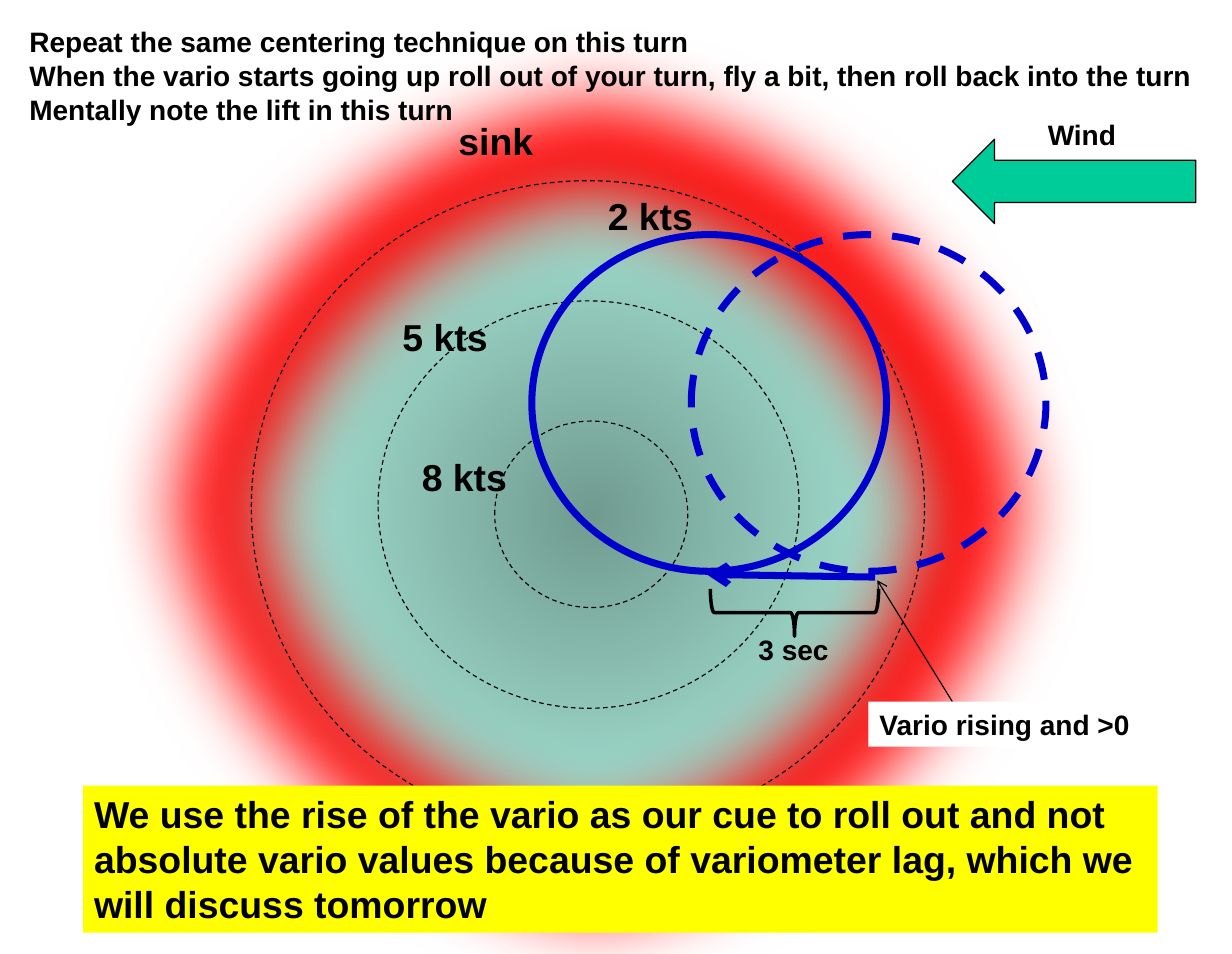
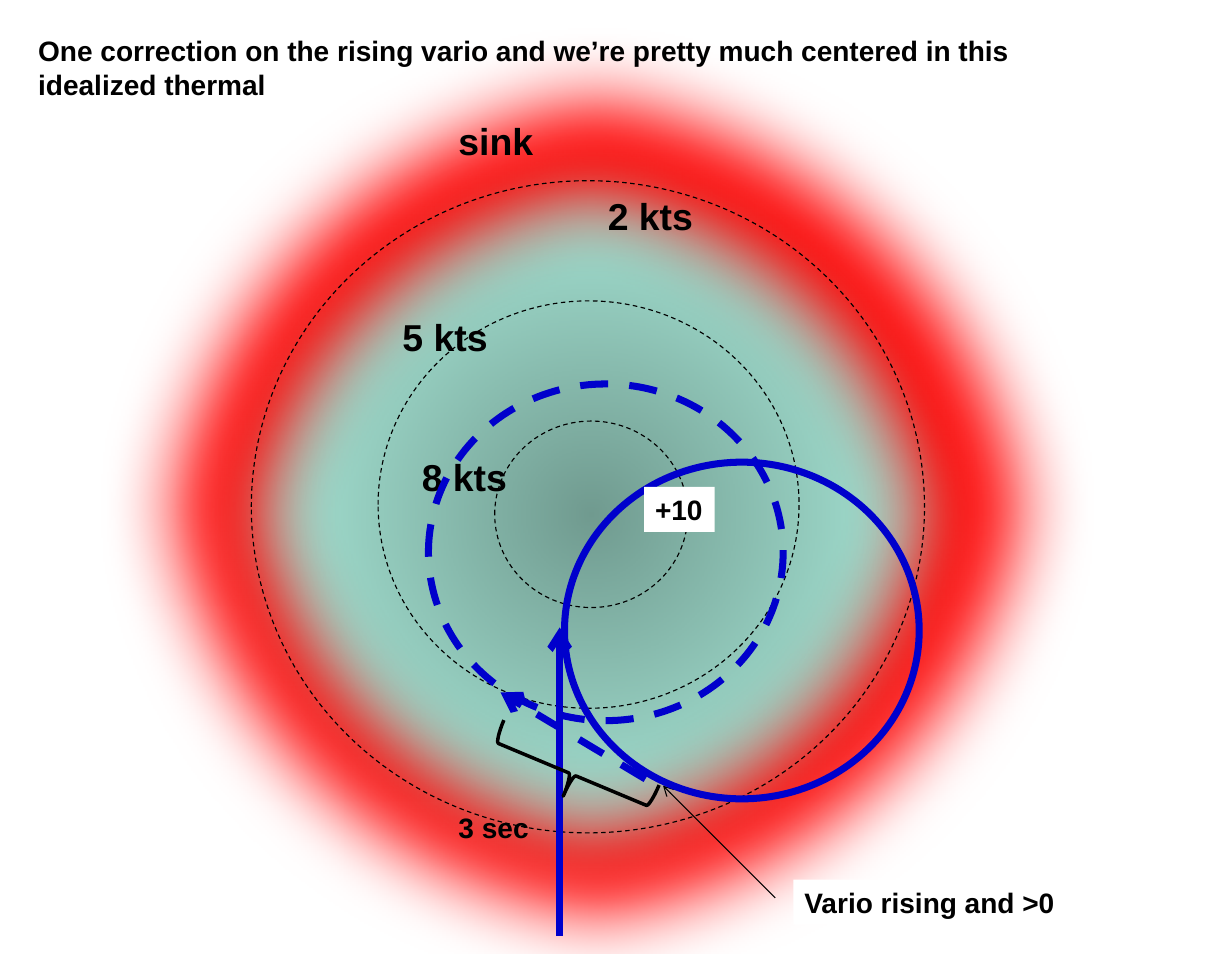
from pptx import Presentation
from pptx.dml.color import RGBColor
from pptx.enum import dml, shapes, text
from pptx.oxml import parse_xml
from pptx.oxml.ns import nsdecls, qn
from pptx.util import Cm, Pt
from lxml import etree

BLACK = RGBColor(0, 0, 0)
WHITE = RGBColor(255, 255, 255)
RED = RGBColor(255, 0, 0)
BLUE = RGBColor(0, 0, 0xCC)
GREEN = RGBColor(0, 0xCC, 0x99)
YELLOW = RGBColor(255, 255, 0)
STOPS = [(0, "709A8F"), (50000, "9FDBCC"), (100000, "C2FFF0")]
DASH = dml.MSO_LINE.DASH
KIND = shapes.MSO_SHAPE


def draw(place, kind, box, fill=None, line=BLACK, width=0.75, dash=None):
    item = place.add_shape(kind, *map(Cm, box))
    item.shadow.inherit = False
    if fill is None:
        item.fill.background()
    else:
        item.fill.solid()
        item.fill.fore_color.rgb = fill
    if line is None:
        item.line.fill.background()
    else:
        item.line.color.rgb = line
        item.line.width = Pt(width)
        item.line.dash_style = dash
    return item


def write(item, words, size=18, wrap=False):
    frame = item.text_frame
    frame.text = words
    frame.word_wrap = wrap
    frame.auto_size = text.MSO_AUTO_SIZE.NONE
    frame.vertical_anchor = text.MSO_ANCHOR.TOP
    for para in frame.paragraphs:
        para.alignment = text.PP_ALIGN.LEFT
        para.font.name = "Arial"
        para.font.size = Pt(size)
        para.font.bold = True
        para.font.color.rgb = BLACK


RINGS = [
    (5.69, 4.09, 15.24, 14.76),
    (8.56, 6.81, 9.53, 9.22),
    (11.2, 9.53, 4.37, 4.22),
]
LIFTS = [
    ("sink", 10.13, 2.54),
    ("2 kts", 13.51, 4.24),
    ("5 kts", 8.86, 6.99),
    ("8 kts", 9.3, 10.16),
]
VARIO = "Vario rising and >0"
TURNS = [
    dict(
        title="Repeat the same centering technique on this turn\n"
        "When the vario starts going up roll out of your turn, fly a bit, "
        "then roll back into the turn\n"
        "Mentally note the lift in this turn",
        box=(0.41, 0.43, 27.48, 3.33),
        lines=[
            ((19.81, 13.06, 16, 13), BLUE, 4.5, None),
            ((21.56, 15.88, 19.86, 13.13), BLACK, 0.75, None),
        ],
        loops=[(15.65, 5.31, DASH), (12.04, 5.31, None)],
        brace=(17.45, 11.96, 90),
        time=(16.92, 14.2),
        notes=[(VARIO, 19.66, 15.88, 6.22)],
    ),
    dict(
        title="One correction on the rising vario and we’re pretty much "
        "centered in this idealized thermal",
        box=(0.61, 0.64, 23.93, 1.8),
        lines=[
            ((12.67, 21.18, 12.67, 14.2), BLUE, 4.5, None),
            ((14.61, 17.63, 11.33, 15.67), BLUE, 4.5, DASH),
            ((17.55, 20.32, 15.01, 17.78), BLACK, 0.75, None),
        ],
        loops=[(12.78, 10.46, None), (9.7, 8.69, DASH)],
        brace=(12.42, 15.62, 112.7),
        time=(10.13, 18.21),
        notes=[(VARIO, 17.96, 19.91, 6.22), ("+10", 14.58, 11.02, 1.6)],
    ),
]

deck = Presentation()
deck.slide_width, deck.slide_height = Cm(27.89), Cm(21.59)

for turn in TURNS:
    slide = deck.slides.add_slide(deck.slide_layouts[5])
    tree = slide.shapes
    group = tree.add_group_shape().shapes

    sink = draw(group, KIND.OVAL, (2.08, 0.43, 22.86, 22.12), RED)
    lift = draw(group, KIND.OVAL, (3.99, 2.54, 18.8, 18.21))
    stops = "".join(
        f'<a:gs pos="{pos}"><a:srgbClr val="{tone}"/></a:gs>' for pos, tone in STOPS
    )
    grad = parse_xml(
        f'<a:gradFill {nsdecls("a")} rotWithShape="1"><a:gsLst>{stops}</a:gsLst>'
        '<a:path path="circle"><a:fillToRect l="50000" t="50000" r="50000" '
        'b="50000"/></a:path></a:gradFill>'
    )
    props = lift.element.spPr
    props.replace(props.find(qn("a:noFill")), grad)
    for zone in (sink, lift):
        glow = zone.element.spPr.find(qn("a:effectLst"))
        etree.SubElement(glow, qn("a:softEdge"), rad=str(Pt(50)))
    for ring in RINGS:
        draw(group, KIND.OVAL, ring, dash=DASH)
    for words, left, top in LIFTS:
        label = group.add_textbox(Cm(left), Cm(top), Cm(2.46), Cm(1.27))
        write(label, words, size=24)

    for ends, tone, width, dash in turn["lines"]:
        link = tree.add_connector(shapes.MSO_CONNECTOR.STRAIGHT, *map(Cm, ends))
        link.line.color.rgb = tone
        link.line.width = Pt(width)
        link.line.dash_style = dash
        props = link.element.spPr
        etree.SubElement(props.find(qn("a:ln")), qn("a:tailEnd"), type="arrow")
        etree.SubElement(props, qn("a:effectLst"))

    for left, top, dash in turn["loops"]:
        draw(tree, KIND.OVAL, (left, top, 8.03, 7.62), line=BLUE, width=4.5, dash=dash)

    left, top, angle = turn["brace"]
    brace = draw(tree, KIND.RIGHT_BRACE, (left, top, 1.07, 3.81), width=2.25)
    brace.rotation = angle
    left, top = turn["time"]
    write(tree.add_textbox(Cm(left), Cm(top), Cm(2.11), Cm(1.02)), "3 sec")

    for words, left, top, width in turn["notes"]:
        note = draw(tree, KIND.RECTANGLE, (left, top, width, 1.02), WHITE, None)
        write(note, words)

    title = tree.title
    title.left, title.top, title.width, title.height = map(Cm, turn["box"])
    write(title, turn["title"], wrap=True)
    tree.element.append(title.element)

tree = deck.slides[0].shapes
wind = draw(tree, KIND.RIGHT_ARROW, (21.56, 3.15, 5.51, 1.91), GREEN)
wind.rotation = 180
write(tree.add_textbox(Cm(23.47), Cm(2.54), Cm(2.08), Cm(1.02)), "Wind")
cue = draw(tree, KIND.RECTANGLE, (1.88, 17.78, 24.33, 3.33), YELLOW, None)
write(
    cue,
    "We use the rise of the vario as our cue to roll out and not absolute vario "
    "values because of variometer lag, which we will discuss tomorrow",
    size=24,
    wrap=True,
)

deck.save("out.pptx")
